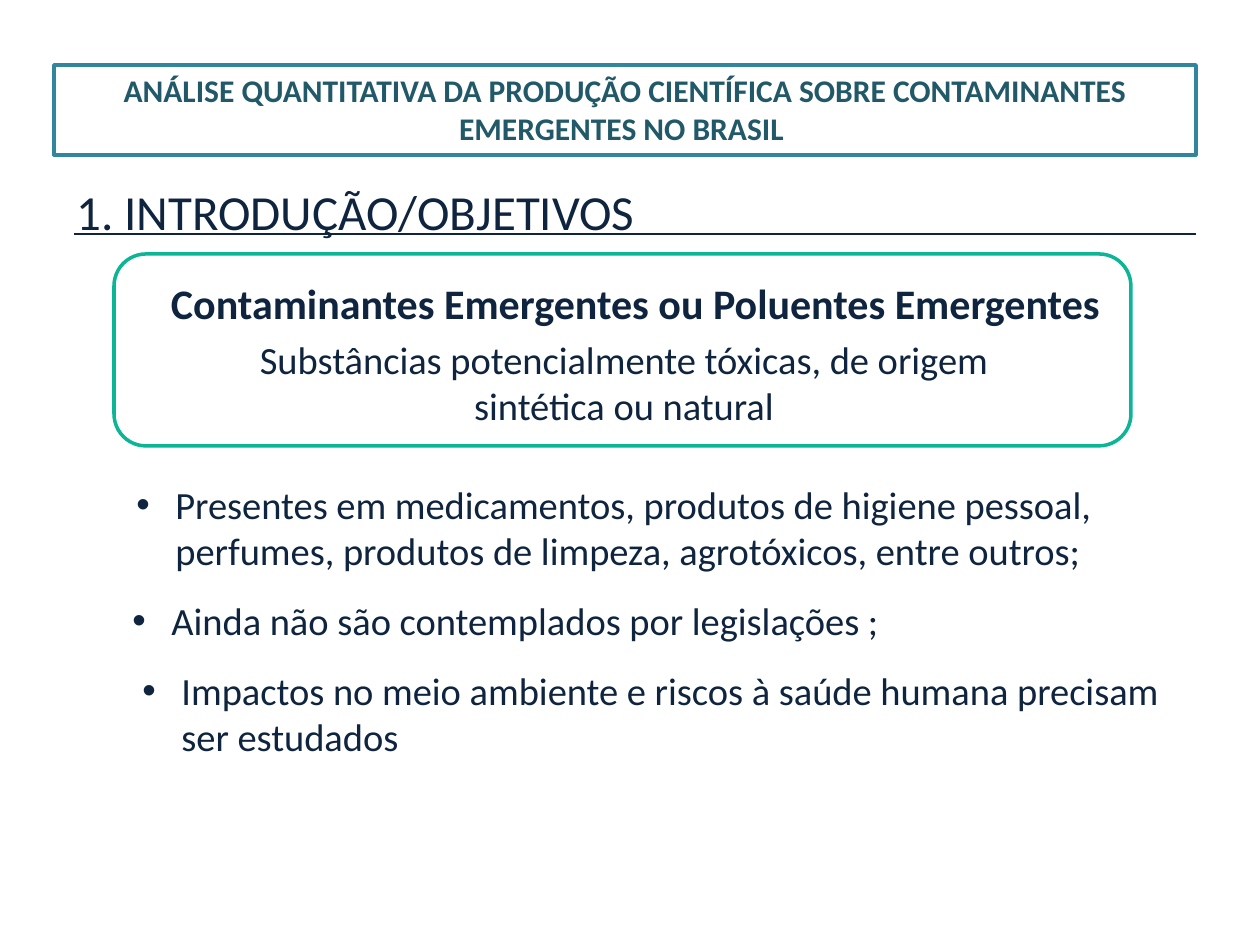
"""Build the introduction slide on emerging contaminants in Brazil."""
from lxml import etree
from pptx import Presentation
from pptx.dml.color import RGBColor
from pptx.enum.shapes import MSO_CONNECTOR, MSO_SHAPE
from pptx.enum.text import PP_ALIGN
from pptx.oxml.ns import qn
from pptx.util import Emu, Pt

LEFT, CENTER = PP_ALIGN.LEFT, PP_ALIGN.CENTER
RECTANGLE, ROUNDED = MSO_SHAPE.RECTANGLE, MSO_SHAPE.ROUNDED_RECTANGLE
STRAIGHT = MSO_CONNECTOR.STRAIGHT
NAVY = RGBColor(0x0F, 0x24, 0x3E)
TEAL = RGBColor(0x31, 0x85, 0x9C)
DARK_TEAL = RGBColor(0x21, 0x59, 0x68)
GREEN = RGBColor(0x0B, 0xB5, 0x95)
EMU_PER_PX = 914400 / 126
BULLET_INDENT = 39


def px(*lengths):
    return [Emu(round(length * EMU_PER_PX)) for length in lengths]


def add_text(box, text, size, color=NAVY, bold=False, align=LEFT, bullet=False):
    frame = slide.shapes.add_textbox(*px(*box)).text_frame
    frame.word_wrap = True
    paragraph = frame.paragraphs[0]
    paragraph.text = text
    paragraph.alignment = align
    if bullet:
        indent = px(BULLET_INDENT)[0]
        properties = paragraph._p.get_or_add_pPr()
        properties.set("marL", str(indent))
        properties.set("indent", str(-indent))
        etree.SubElement(properties, qn("a:buFont")).set("typeface", "Arial")
        etree.SubElement(properties, qn("a:buChar")).set("char", "•")
    font = paragraph.font
    font.name = "Calibri"
    font.size = Pt(size)
    font.bold = bold
    font.color.rgb = color


presentation = Presentation()
presentation.slide_width, presentation.slide_height = px(1260, 945)
slide = presentation.slides.add_slide(presentation.slide_layouts[6])

add_text((64, 175, 694, 72), "1. INTRODUÇÃO/OBJETIVOS", 28)

heading_rule = slide.shapes.add_connector(STRAIGHT, *px(74, 234, 1196, 234))
heading_rule.line.color.rgb = NAVY
heading_rule.line.width = Pt(0.75)
etree.SubElement(heading_rule._element.spPr, qn("a:effectLst"))

title_box = (54, 65, 1142, 90)
definition_box = (114, 254, 1017, 192)
for kind, box, color in ((RECTANGLE, title_box, TEAL), (ROUNDED, definition_box, GREEN)):
    border = slide.shapes.add_shape(kind, *px(*box))
    border.shadow.inherit = False
    border.fill.background()
    border.line.color.rgb = color
    border.line.width = Pt(2)

add_text(
    title_box,
    "ANÁLISE QUANTITATIVA DA PRODUÇÃO CIENTÍFICA SOBRE CONTAMINANTES EMERGENTES NO BRASIL ",
    18, DARK_TEAL, bold=True, align=CENTER,
)
add_text(
    (154, 271, 963, 63), "Contaminantes Emergentes ou Poluentes Emergentes",
    24, bold=True, align=CENTER,
)
add_text(
    (200, 330, 848, 106),
    "Substâncias potencialmente tóxicas, de origem sintética ou natural",
    22, align=CENTER,
)

characteristics = (
    ((124, 475, 992, 106), "Presentes em medicamentos, produtos de higiene pessoal, "
                           "perfumes, produtos de limpeza, agrotóxicos, entre outros;"),
    ((120, 591, 1027, 59), "Ainda não são contemplados por legislações ;"),
    ((130, 661, 1066, 106), "Impactos no meio ambiente e riscos à saúde humana precisam "
                            "ser estudados"),
)
for box, text in characteristics:
    add_text(box, text, 22, bullet=True)

presentation.save("out.pptx")
